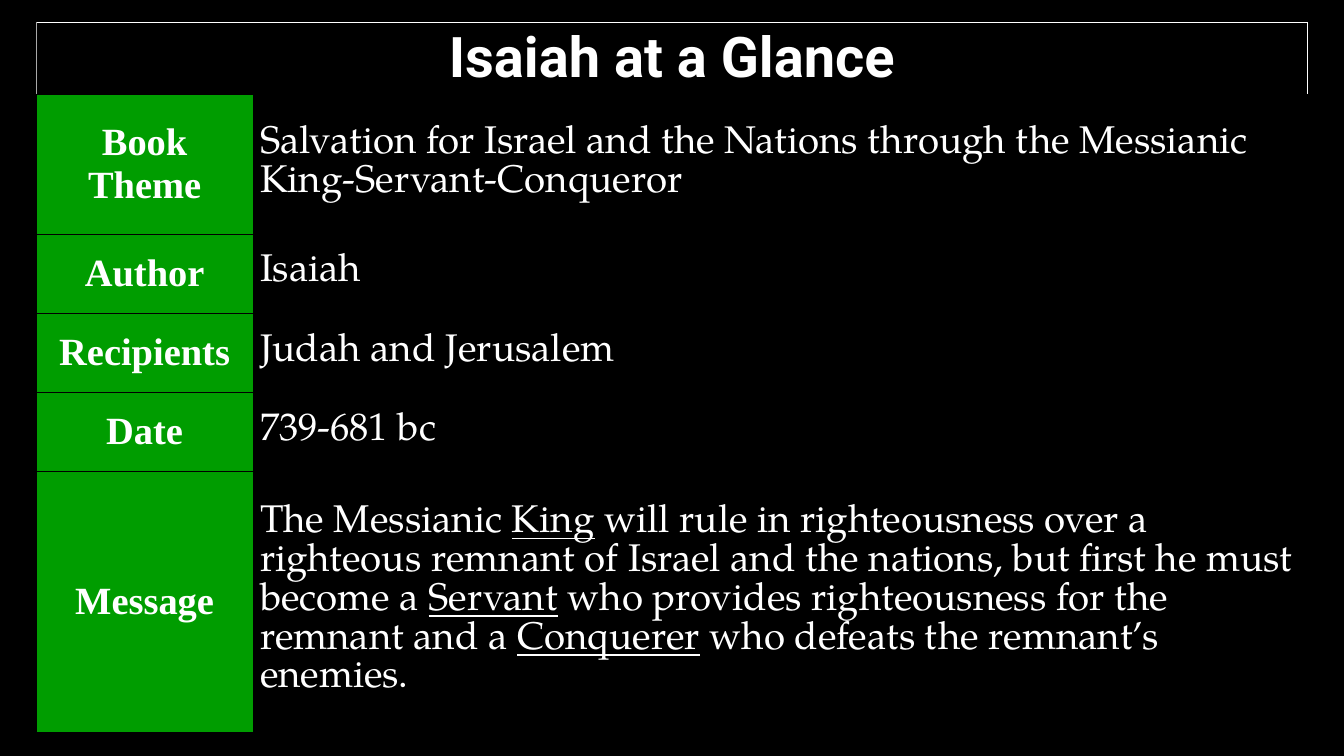
from dataclasses import dataclass

from lxml.etree import SubElement
from pptx import Presentation
from pptx.dml.color import RGBColor
from pptx.enum.text import MSO_ANCHOR, PP_ALIGN
from pptx.oxml.ns import qn
from pptx.table import _Cell
from pptx.util import Inches, Pt

WHITE, BLACK, GREY, GREEN = "FFFFFF", "000000", "A9A9A9", "009D00"
TITLE_FONT, LABEL_FONT, BODY_FONT = "Roboto", "Times New Roman", "TeX Gyre Pagella"
COLUMN_WIDTHS = (4.3, 20.93)
TITLE_HEIGHT = 1.43
LEFT, TOP = 0.72, 0.44


@dataclass
class Fact:
    label: str
    phrases: tuple[str, ...]  # every second phrase is underlined
    height: float = 1.57


@dataclass
class TextStyle:
    font: str
    size: int
    bold: bool
    align: PP_ALIGN
    margin: float


TITLE_STYLE = TextStyle(TITLE_FONT, 80, True, PP_ALIGN.CENTER, 0.06)
LABEL_STYLE = TextStyle(LABEL_FONT, 55, True, PP_ALIGN.CENTER, 0.14)
BODY_STYLE = TextStyle(BODY_FONT, 55, False, PP_ALIGN.LEFT, 0.14)

FACTS = [
    Fact("Book Theme", ("Salvation for Israel and the Nations through the Messianic "
                        "King-Servant-Conqueror",), 2.77),
    Fact("Author", ("Isaiah",)),
    Fact("Recipients", ("Judah and Jerusalem",)),
    Fact("Date", ("739-681 bc",)),
    Fact("Message", (
        "The Messianic ", "King",
        " will rule in righteousness over a righteous remnant of Israel and the nations, "
        "but first he must become a ", "Servant",
        " who provides righteousness for the remnant and a ", "Conquerer",
        " who defeats the remnant’s enemies."), 5.18),
]


def color(value: str) -> RGBColor:
    return RGBColor.from_string(value)


def set_borders(cell: _Cell, left: str = BLACK, right: str = BLACK,
                top: str = BLACK, bottom: str = BLACK) -> None:
    """Add one-point borders; they must come before the fill in the XML."""
    properties = cell._tc.get_or_add_tcPr()
    for side, value in (("L", left), ("R", right), ("T", top), ("B", bottom)):
        line = SubElement(properties, qn(f"a:ln{side}"), w=str(Pt(1)))
        solid = SubElement(line, qn("a:solidFill"))
        SubElement(solid, qn("a:srgbClr"), val=value)


def set_fill(cell: _Cell, value: str | None = None) -> None:
    if value is None:
        cell.fill.background()
    else:
        cell.fill.solid()
        cell.fill.fore_color.rgb = color(value)


def write(cell: _Cell, phrases: tuple[str, ...], style: TextStyle) -> None:
    margin = Inches(style.margin)
    cell.margin_left = cell.margin_right = margin
    cell.margin_top = cell.margin_bottom = margin
    cell.vertical_anchor = MSO_ANCHOR.MIDDLE
    para = cell.text_frame.paragraphs[0]
    para.alignment = style.align
    for index, phrase in enumerate(phrases):
        span = para.add_run()
        span.text = phrase
        span.font.name = style.font
        span.font.size = Pt(style.size)
        span.font.bold = style.bold
        span.font.underline = index % 2 == 1
        span.font.color.rgb = color(WHITE)


def main() -> None:
    deck = Presentation()
    deck.slide_width, deck.slide_height = Inches(26.67), Inches(15)
    page = deck.slides.add_slide(deck.slide_layouts[6])
    page.background.fill.solid()
    page.background.fill.fore_color.rgb = color(BLACK)

    # Table grid
    heights = [TITLE_HEIGHT] + [fact.height for fact in FACTS]
    table = page.shapes.add_table(
        len(heights), len(COLUMN_WIDTHS), Inches(LEFT), Inches(TOP),
        Inches(sum(COLUMN_WIDTHS)), Inches(sum(heights))).table
    table.first_row = table.horz_banding = False
    for column, width in zip(table.columns, COLUMN_WIDTHS):
        column.width = Inches(width)
    for row, height in zip(table.rows, heights):
        row.height = Inches(height)

    # Title row across both columns
    title, title_end = table.cell(0, 0), table.cell(0, 1)
    title.merge(title_end)
    for cell in (title, title_end):
        set_borders(cell, left=GREY, right=WHITE, top=WHITE)
        set_fill(cell)
    write(title, ("Isaiah at a Glance",), TITLE_STYLE)

    # Fact rows
    for row_index, fact in enumerate(FACTS, start=1):
        label, body = table.cell(row_index, 0), table.cell(row_index, 1)
        for cell, fill in ((label, GREEN), (body, None)):
            set_borders(cell)
            set_fill(cell, fill)
        write(label, (fact.label,), LABEL_STYLE)
        write(body, fact.phrases, BODY_STYLE)

    deck.save("out.pptx")


if __name__ == "__main__":
    main()
